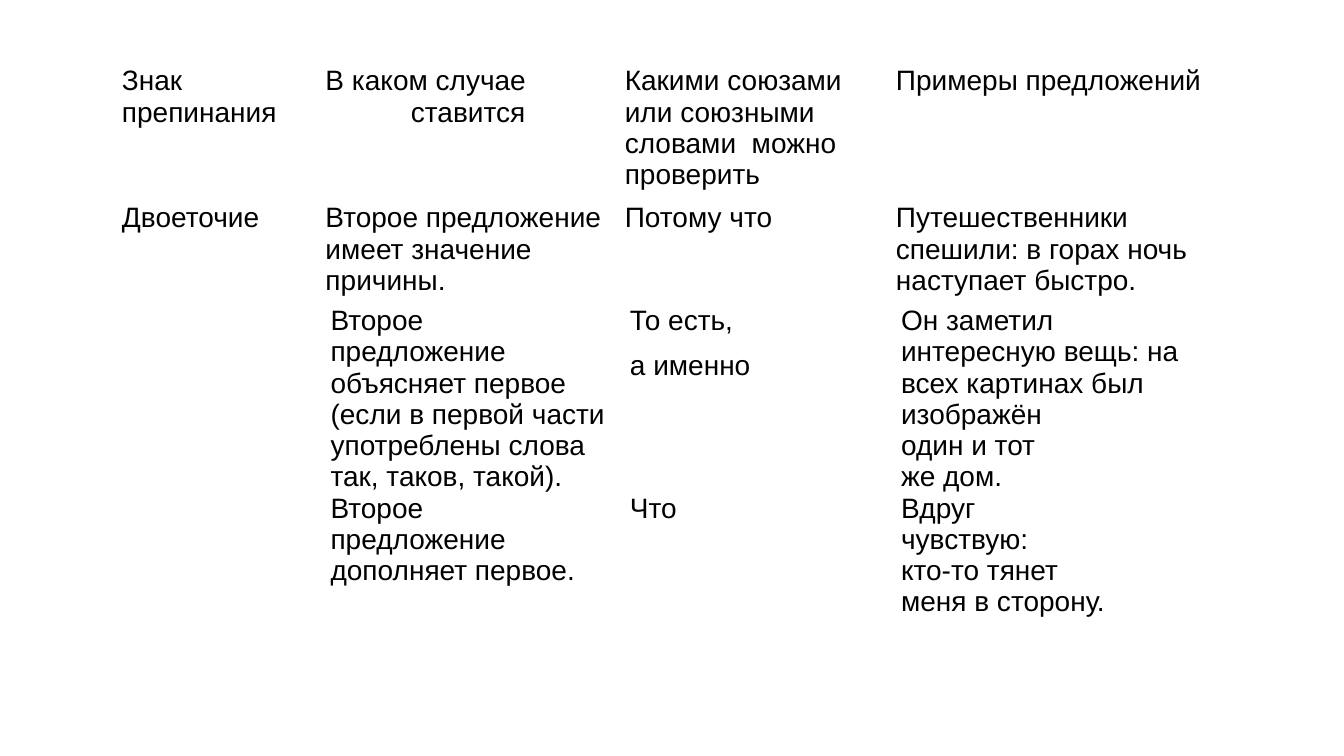
from lxml import etree
from pptx import Presentation
from pptx.dml.color import RGBColor
from pptx.oxml.ns import qn
from pptx.util import Pt

NO_STYLE = "{2D5ABB26-0587-4C30-8999-92F81FD0307C}"
COLUMN_WIDTHS = [145.44, 213.84, 193.68, 234]
ROW_HEIGHTS = [97.92, 73.44, 121.68, 59.04]
SIDE_MARGINS = [5, 5, 8.64, 8.64]

# One list per row; each cell is a list of paragraphs.
PUNCTUATION_RULES = [
    [["Знак", "препинания"],
     ["В каком случае", "ставится"],
     ["Какими союзами", "или союзными словами  можно проверить"],
     ["Примеры предложений"]],
    [["Двоеточие"],
     ["Второе предложение", "имеет значение причины."],
     ["Потому что"],
     ["Путешественники спешили: в горах ночь наступает быстро."]],
    [[],
     ["Второе предложение объясняет первое (если в первой части "
      "употреблены слова так, таков, такой)."],
     ["То есть,", "а именно"],
     ["Он заметил интересную вещь: на всех картинах был изображён",
      "один и тот", "же дом."]],
    [[],
     ["Второе предложение дополняет первое."],
     ["Что"],
     ["Вдруг", "чувствую:", "кто-то тянет", "меня в сторону."]],
]
LEFT_INDENTS = {"ставится": 61}
SPACES_BEFORE = {"а именно": 10}


def color(hex_value):
    return RGBColor.from_string(hex_value)


def fill_cell(cell, lines, side_margin):
    cell.fill.background()
    cell.margin_left = cell.margin_right = Pt(side_margin)
    cell.margin_top = cell.margin_bottom = 0
    for index, line in enumerate(lines):
        frame = cell.text_frame
        paragraph = frame.add_paragraph() if index else frame.paragraphs[0]
        if line in SPACES_BEFORE:
            paragraph.space_before = Pt(SPACES_BEFORE[line])
        if line in LEFT_INDENTS:
            paragraph._p.get_or_add_pPr().set("marL", str(Pt(LEFT_INDENTS[line])))
        run = paragraph.add_run()
        run.text = line
        run.font.name = "Arial"
        run.font.size = Pt(20)
        run.font.color.rgb = color("000000")


def add_rules_table(slide, left, top):
    table = slide.shapes.add_table(
        len(ROW_HEIGHTS), len(COLUMN_WIDTHS), Pt(left), Pt(top),
        Pt(sum(COLUMN_WIDTHS)), Pt(sum(ROW_HEIGHTS))).table
    table.first_row = table.horz_banding = False
    properties = table._tbl.tblPr
    style = properties.find(qn("a:tableStyleId"))
    if style is None:
        style = etree.SubElement(properties, qn("a:tableStyleId"))
    style.text = NO_STYLE
    for column, width in zip(table.columns, COLUMN_WIDTHS):
        column.width = Pt(width)
    for row, height, margin, rule in zip(
            table.rows, ROW_HEIGHTS, SIDE_MARGINS, PUNCTUATION_RULES):
        row.height = Pt(height)
        for cell, lines in zip(row.cells, rule):
            fill_cell(cell, lines, margin)


def main():
    deck = Presentation()
    deck.slide_width, deck.slide_height = Pt(960), Pt(540)
    slide = deck.slides.add_slide(deck.slide_layouts[6])
    add_rules_table(slide, left=82.08, top=46.8)
    deck.save("out.pptx")


if __name__ == "__main__":
    main()
